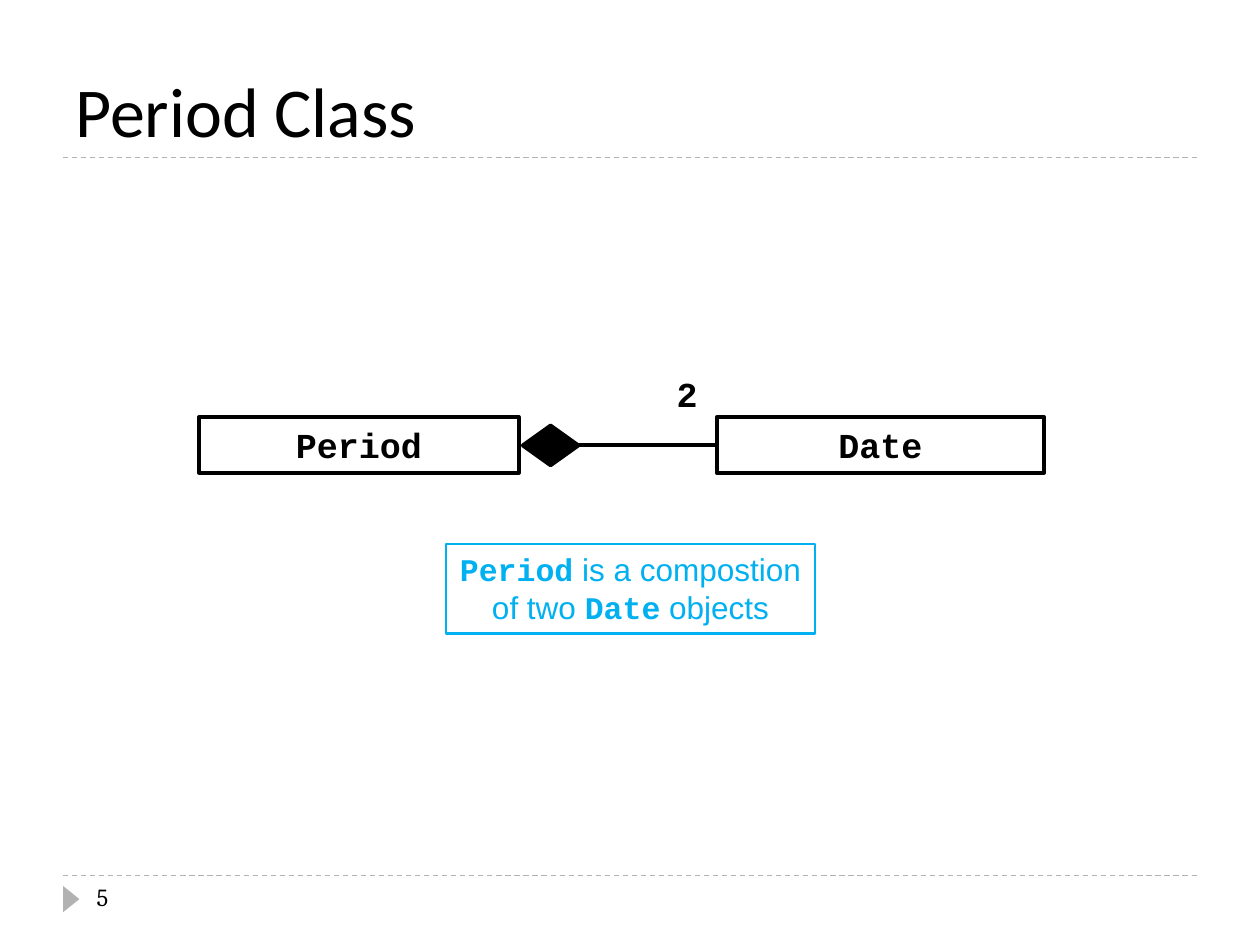
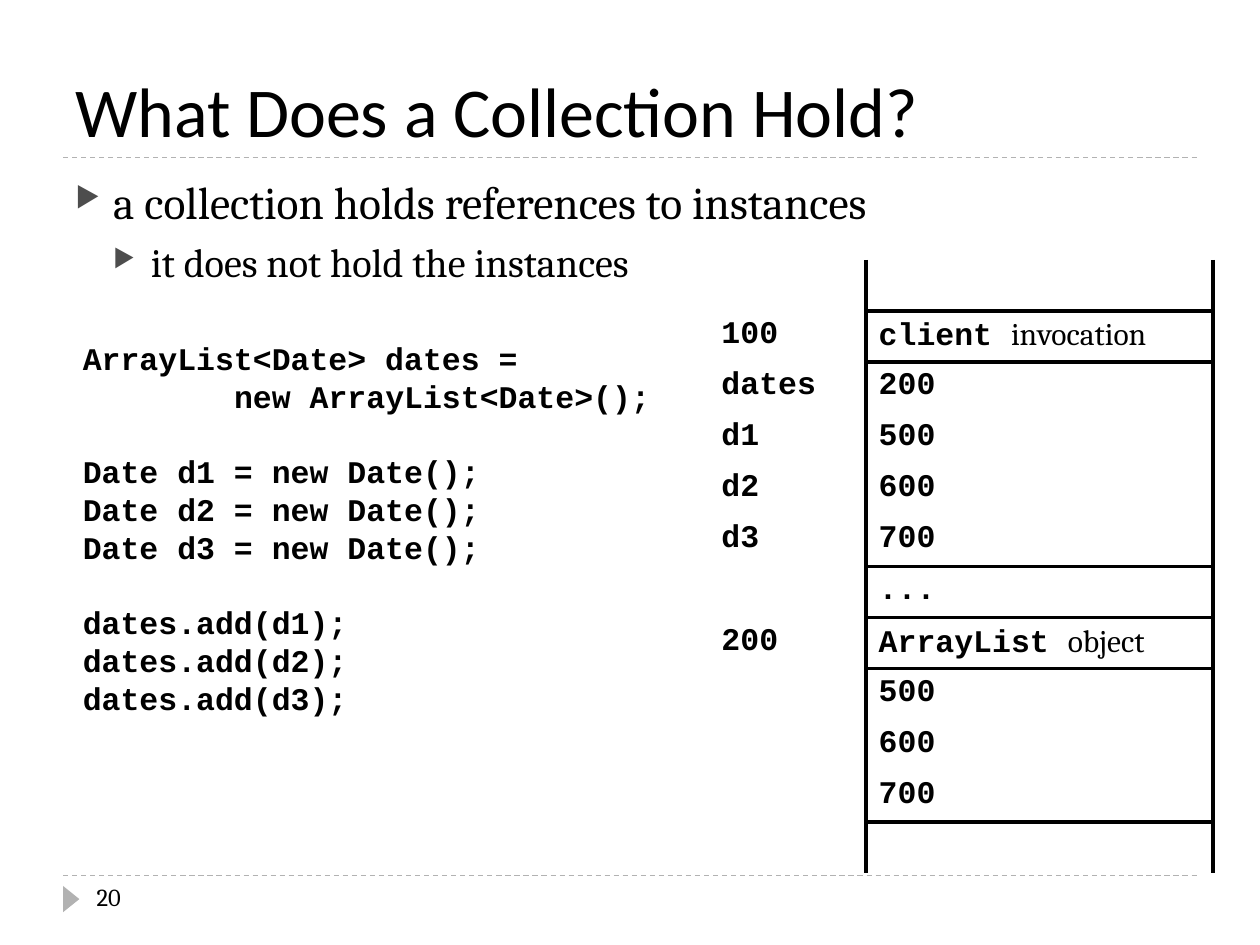
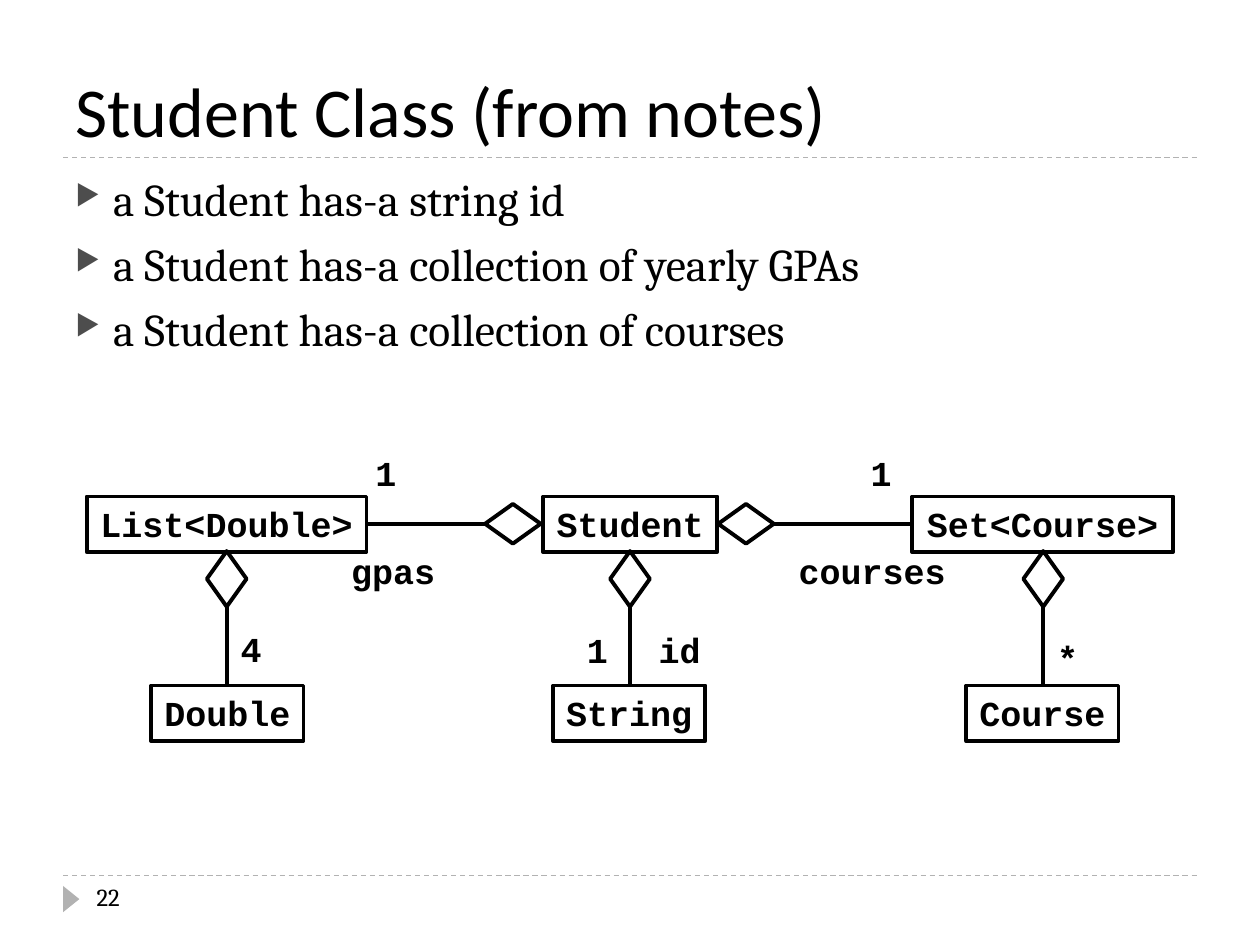
"""Build three lecture slides on composition, collections and class diagrams."""
from lxml.etree import SubElement
from pptx import Presentation
from pptx.dml.color import RGBColor
from pptx.enum.dml import MSO_LINE
from pptx.enum.shapes import MSO_CONNECTOR, MSO_SHAPE
from pptx.enum.text import MSO_ANCHOR, PP_ALIGN
from pptx.oxml.ns import qn
from pptx.util import Cm, Pt

COLORS = {"ink": "000000", "rule": "B2B2B2", "bullet": "4D4D4D", "note": "00B0F0"}
RGB = {name: RGBColor.from_string(value) for name, value in COLORS.items()}
CODE, BODY, HEADING, NOTE = "Courier New", "Cambria", "Calibri", "Arial"
CENTER, LEFT = PP_ALIGN.CENTER, PP_ALIGN.LEFT
CLASS_HEIGHT = 1.12
PEN = 2.25


def write(frame, lines, size, color="ink", align=LEFT, wrap=False, anchor=MSO_ANCHOR.TOP):
    """Fill a text frame with lines, each a list of (text, font) runs."""
    frame.word_wrap = wrap
    frame.vertical_anchor = anchor
    for index, runs in enumerate(lines):
        paragraph = frame.paragraphs[0] if index == 0 else frame.add_paragraph()
        paragraph.alignment = align
        for text, font in runs:
            run = paragraph.add_run()
            run.text = text
            run.font.name = font
            run.font.size = Pt(size)
            run.font.bold = font == CODE
            run.font.color.rgb = RGB[color]
    return frame.paragraphs


def add_outline(slide, kind, left, top, width, height, line="ink", weight=PEN, fill=None):
    """Add a preset shape with a plain line and an optional fill."""
    shape = slide.shapes.add_shape(kind, Cm(left), Cm(top), Cm(width), Cm(height))
    shape.shadow.inherit = False
    shape.line.color.rgb = RGB[line]
    shape.line.width = Pt(weight)
    if fill:
        shape.fill.solid()
        shape.fill.fore_color.rgb = RGB[fill]
    else:
        shape.fill.background()
    return shape


pages = [
    {
        "title": "Period Class", "number": "5", "bullets": [], "bullets_top": 3.38,
        "classes": [("Period", 4.01, 8.41, 6.45), ("Date", 14.45, 8.41, 6.6)],
        "diamonds": [(11.1, 8.98, 0, "ink")],
        "links": [(11.66, 8.97, 14.45, 8.97)],
        "labels": [("2", 13.39, 7.39)],
    },
    {
        "title": "What Does a Collection Hold?", "number": "20", "bullets_top": 3.38,
        "bullets": [("a collection holds references to instances", 0),
                    ("it does not hold the instances", 1)],
        "classes": [], "diamonds": [], "links": [], "labels": [],
    },
    {
        "title": "Student Class (from notes)", "number": "22", "bullets_top": 3.33,
        "bullets": [("a Student has-a string id", 0),
                    ("a Student has-a collection of yearly GPAs", 0),
                    ("a Student has-a collection of courses", 0)],
        "classes": [("Student", 10.95, 10.01, 3.51), ("Set<Course>", 18.39, 10.01, 5.26),
                    ("List<Double>", 1.75, 10.01, 5.64), ("Double", 3.05, 13.82, 3.07),
                    ("Course", 19.48, 13.82, 3.07), ("String", 11.15, 13.82, 3.07)],
        "diamonds": [(10.34, 10.56, 0, None), (15.04, 10.56, 0, None)]
                    + [(x, 11.67, 90, None) for x in (4.57, 12.7, 21.03)],
        "links": [(9.78, 10.57, 7.39, 10.57), (15.6, 10.57, 18.39, 10.57)]
                 + [(x, 12.22, x, 13.82) for x in (4.57, 12.7, 21.03)],
        "labels": [("1", 7.32, 8.97), ("1", 17.3, 8.97), ("1", 11.58, 12.55),
                   ("4", 4.6, 12.52), ("*", 21.06, 12.7), ("gpas", 6.83, 10.95),
                   ("courses", 15.85, 10.95), ("id", 13.03, 12.55)],
    },
]

deck = Presentation()
deck.slide_width, deck.slide_height = Cm(25.4), Cm(19.05)
slides = []

for page in pages:
    slide = deck.slides.add_slide(deck.slide_layouts[6])
    slides.append(slide)

    rules = [(1.27, y, 24.13, y, "rule", 0.75, MSO_LINE.DASH) for y in (17.65, 3.18)]
    links = [(*ends, "ink", PEN, None) for ends in page["links"]]
    for x1, y1, x2, y2, color, weight, dash in rules + links:
        stroke = slide.shapes.add_connector(
            MSO_CONNECTOR.STRAIGHT, Cm(x1), Cm(y1), Cm(x2), Cm(y2))
        stroke.line.color.rgb = RGB[color]
        stroke.line.width = Pt(weight)
        stroke.line.dash_style = dash
        SubElement(stroke._element.spPr, qn("a:effectLst"))

    marker = add_outline(slide, MSO_SHAPE.ISOSCELES_TRIANGLE, 1.17, 17.96, 0.53, 0.33,
                         "rule", fill="rule")
    marker.line.fill.background()
    marker.rotation = 90

    heading = slide.shapes.add_textbox(Cm(1.27), Cm(0.43), Cm(22.86), Cm(2.74))
    write(heading.text_frame, [[(page["title"], HEADING)]], 40,
          wrap=True, anchor=MSO_ANCHOR.BOTTOM)
    number = slide.shapes.add_textbox(Cm(1.7), Cm(17.65), Cm(5.51), Cm(1.02))
    write(number.text_frame, [[(page["number"], BODY)]], 14, wrap=True)

    if page["bullets"]:
        points = slide.shapes.add_textbox(
            Cm(1.27), Cm(page["bullets_top"]), Cm(22.86), Cm(13.72))
        paragraphs = write(points.text_frame, [[(text, BODY)] for text, _ in page["bullets"]],
                           26, wrap=True)
        for paragraph, (_, level) in zip(paragraphs, page["bullets"]):
            paragraph.level = level
            paragraph.space_before = Pt(6 - level)
            paragraph.runs[0].font.size = Pt(26 - 3 * level)
            props = paragraph._p.get_or_add_pPr()
            props.set("marL", str(Cm(0.76 * (level + 1))))
            props.set("indent", str(Cm(-0.76)))
            tint = SubElement(props, qn("a:buClr"))
            SubElement(tint, qn("a:srgbClr"), val=COLORS["bullet"])
            SubElement(props, qn("a:buSzPct"), val="62000")
            SubElement(props, qn("a:buChar"), char="▶")

    for name, left, top, width in page["classes"]:
        box = add_outline(slide, MSO_SHAPE.RECTANGLE, left, top, width, CLASS_HEIGHT)
        write(box.text_frame, [[(name, CODE)]], 20, align=CENTER)
    for x, y, rotation, fill in page["diamonds"]:
        diamond = add_outline(slide, MSO_SHAPE.DIAMOND, x - 0.56, y - 0.4, 1.12, 0.8, fill=fill)
        diamond.rotation = rotation
    for text, left, top in page["labels"]:
        label = slide.shapes.add_textbox(
            Cm(left), Cm(top), Cm(0.53 + 0.43 * len(text)), Cm(CLASS_HEIGHT))
        write(label.text_frame, [[(text, CODE)]], 20)

period_slide, collection_slide, _ = slides

summary = add_outline(period_slide, MSO_SHAPE.RECTANGLE, 8.99, 10.97, 7.44, 1.8, "note", 1.5)
write(summary.text_frame,
      [[("Period", CODE), (" is a compostion", NOTE)],
       [("of two ", NOTE), ("Date", CODE), (" objects", NOTE)]],
      18, "note", CENTER)

statements = [
    "ArrayList<Date> dates =", "new ArrayList<Date>();",
    "Date d1 = new Date();", "Date d2 = new Date();", "Date d3 = new Date();",
    "dates.add(d1);", "dates.add(d2);", "dates.add(d3);",
]
listing = collection_slide.shapes.add_textbox(Cm(1.42), Cm(6.71), Cm(12.01), Cm(7.95))
code_lines = write(listing.text_frame, [[(text, CODE)] for text in statements], 18)
code_lines[1]._p.get_or_add_pPr().set("marL", str(Cm(3.05)))
for group_start in (2, 5):
    code_lines[group_start].space_before = Pt(21.5)

memory = [
    ("", []),
    ("100", [("client ", CODE), ("invocation", BODY)]),
    ("dates", [("200", CODE)]),
    ("d1", [("500", CODE)]),
    ("d2", [("600", CODE)]),
    ("d3", [("700", CODE)]),
    ("", [("...", CODE)]),
    ("200", [("ArrayList ", CODE), ("object", BODY)]),
    ("", [("500", CODE)]),
    ("", [("600", CODE)]),
    ("", [("700", CODE)]),
    ("", []),
]
ruled_tops = {1, 2, 6, 7, 8, 11}
row_height = 1.03
table = collection_slide.shapes.add_table(
    len(memory), 2, Cm(14.29), Cm(5.24), Cm(10.16), Cm(row_height * len(memory))).table
table.first_row = table.horz_banding = False
no_style = "{2D5ABB26-0587-4C30-8999-92F81FD0307C}"
table._tbl.tblPr.find(qn("a:tableStyleId")).text = no_style
table.columns[0].width, table.columns[1].width = Cm(3.17), Cm(6.99)
for row, (address, content) in enumerate(memory):
    table.rows[row].height = Cm(row_height)
    for column, runs in enumerate(([(address, CODE)] if address else [], content)):
        cell = table.cell(row, column)
        if runs:
            write(cell.text_frame, [runs], 18, wrap=True)
        in_memory = column == 1
        edges = {
            "lnL": in_memory,
            "lnR": True,
            "lnT": in_memory and row in ruled_tops,
            "lnB": in_memory and row + 1 in ruled_tops,
        }
        for edge, drawn in edges.items():
            border = SubElement(cell._tc.get_or_add_tcPr(), qn(f"a:{edge}"), w=str(Pt(PEN)))
            if drawn:
                paint = SubElement(border, qn("a:solidFill"))
                SubElement(paint, qn("a:srgbClr"), val=COLORS["ink"])
            else:
                SubElement(border, qn("a:noFill"))
        cell.fill.background()

deck.save("out.pptx")
